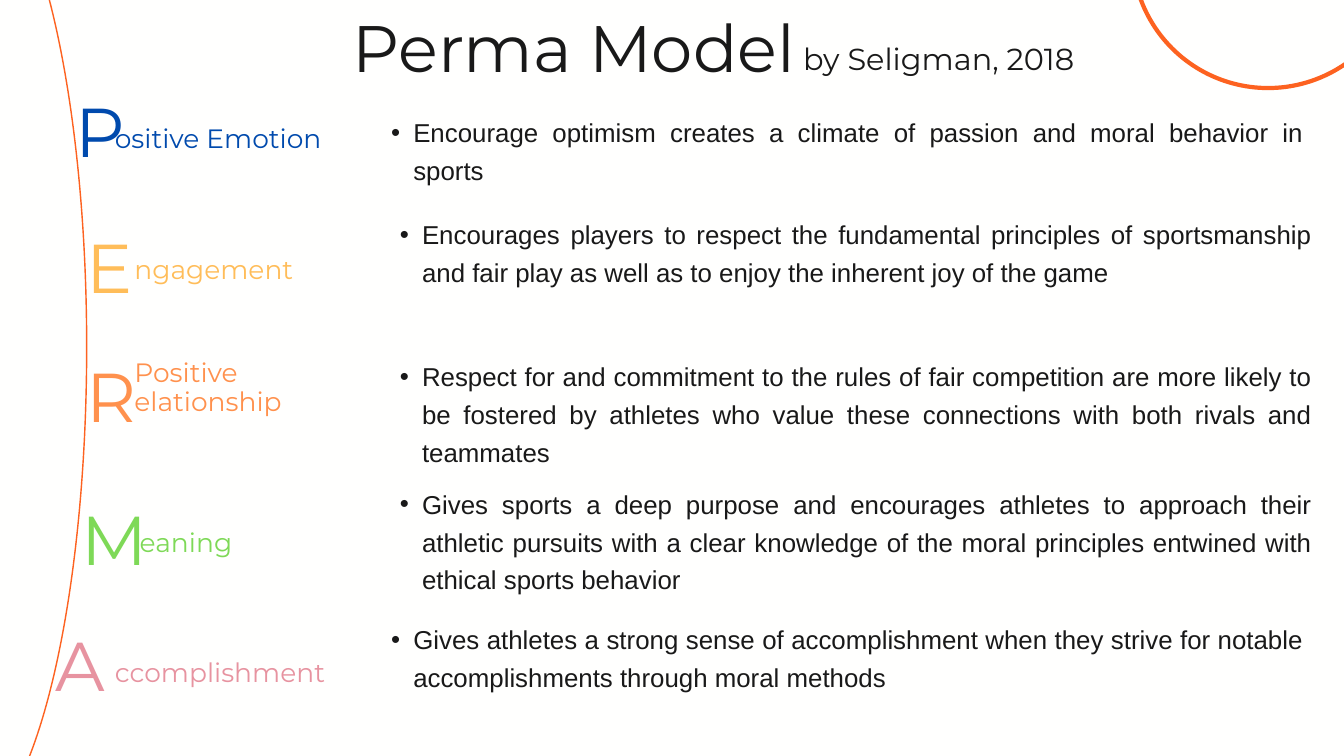
from copy import deepcopy

from pptx import Presentation
from pptx.dml.color import RGBColor
from pptx.enum.shapes import MSO_SHAPE
from pptx.enum.text import MSO_ANCHOR, MSO_AUTO_SIZE, PP_ALIGN
from pptx.oxml.ns import qn
from pptx.util import Inches, Pt

INK, ORANGE, PAPER = "191919", "FD6220", "FFFFFE"
HEAD_FONT, BODY_FONT = "Montserrat", "Arial"

# letter, rest of the word, colour, letter box, word box, bullet box, bullet
ROWS = [
    ("P", ["ositive Emotion"], "004AAD",
     (1.12, 1.11, 0.95, 1.35), (1.71, 1.86, 3.63, 0.45), (5.5, 1.64, 13.9, 1.16),
     "Encourage optimism creates a climate of passion and moral behavior in sports"),
    ("E", ["ngagement"], "FFBD59",
     (1.29, 3.14, 0.95, 1.39), (2, 3.81, 3.63, 0.45), (5.63, 3.16, 13.9, 2.24),
     "Encourages players to respect the fundamental principles of sportsmanship "
     "and fair play as well as to enjoy the inherent joy of the game"),
    ("R", ["Positive", "elationship"], "FF914D",
     (1.29, 5.05, 0.95, 1.35), (2, 5.34, 3.63, 0.88), (5.63, 5.27, 13.9, 2.24),
     "Respect for and commitment to the rules of fair competition are more likely "
     "to be fostered by athletes who value these connections with both rivals and teammates"),
    ("M", ["eaning"], "7ED957",
     (1.21, 7.18, 0.95, 1.35), (2.08, 7.87, 3.63, 0.45), (5.63, 7.17, 13.9, 1.69),
     "Gives sports a deep purpose and encourages athletes to approach their athletic "
     "pursuits with a clear knowledge of the moral principles entwined with ethical "
     "sports behavior"),
    ("A", ["ccomplishment"], "E793A0",
     (0.83, 9.05, 0.95, 1.35), (1.71, 9.8, 3.63, 0.45), (5.5, 9.18, 13.9, 2.24),
     "Gives athletes a strong sense of accomplishment when they strive for notable "
     "accomplishments through moral methods"),
]


def rgb(color):
    return RGBColor.from_string(color)


def set_attrs(obj, **values):
    for name, value in values.items():
        setattr(obj, name, value)


def place(sp, box):
    names = ("left", "top", "width", "height")
    set_attrs(sp, **{n: Inches(v) for n, v in zip(names, box)})


def write(sp, box, lines, size, spacing, color=INK, font=HEAD_FONT, align=PP_ALIGN.LEFT):
    """Place a text shape and fill it with one paragraph per line."""
    place(sp, box)
    tf = sp.text_frame
    set_attrs(tf, word_wrap=True, auto_size=MSO_AUTO_SIZE.SHAPE_TO_FIT_TEXT,
              vertical_anchor=MSO_ANCHOR.TOP, margin_left=0, margin_top=0,
              margin_right=0, margin_bottom=0)
    for i, line in enumerate(lines):
        p = tf.add_paragraph() if i else tf.paragraphs[0]
        set_attrs(p, alignment=align, line_spacing=Pt(spacing),
                  space_before=Pt(0), space_after=Pt(0))
        r = p.add_run()
        r.text = line
        set_attrs(r.font, name=font, size=Pt(size))
        r.font.color.rgb = rgb(color)


def add_text(s, box, lines, *style, **options):
    write(s.shapes.add_textbox(0, 0, 0, 0), box, lines, *style, **options)


def add_ring(s, box, weight):
    sp = s.shapes.add_shape(MSO_SHAPE.OVAL, 0, 0, 0, 0)
    place(sp, box)
    sp.shadow.inherit = False
    sp.fill.background()
    sp.line.color.rgb = rgb(ORANGE)
    sp.line.width = Pt(weight)


def add_heading(s):
    write(s.shapes.title, (5.24, -0.1, 7.26, 1.27), ["Perma Model"], 70.3, 98.5)
    add_text(s, (11.95, 0.51, 6.92, 0.61), ["by Seligman, 2018"], 32.5, 45.4)


def add_bullet(body, box, text):
    write(body, box, [text], 27.7, 40.4, font=BODY_FONT, align=PP_ALIGN.JUSTIFY)
    p = body.text_frame.paragraphs[0]
    p.level = 1
    pPr = p._p.get_or_add_pPr()
    pPr.set("marL", str(Inches(0.65)))
    pPr.set("indent", str(Inches(-0.33)))
    for tag, key, value in (("a:buFont", "typeface", BODY_FONT), ("a:buChar", "char", "•")):
        bullet = pPr.makeelement(qn(tag), {})
        bullet.set(key, value)
        pPr.append(bullet)


def add_row(s, body, row):
    letter, word, color, letter_box, word_box, bullet_box, bullet = row
    add_text(s, letter_box, [letter], 74, 103.6, color=color)
    add_text(s, word_box, word, 28.4, 31.2, color=color, align=PP_ALIGN.JUSTIFY)
    add_bullet(body, bullet_box, bullet)


def repeat_body(layout, count):
    """Give the layout one body placeholder per row."""
    body = next(ph for ph in layout.placeholders if ph.placeholder_format.idx == 1)
    for i in range(1, count):
        clone = deepcopy(body._element)
        clone.nvSpPr.cNvPr.set("id", str(20 + i))
        clone.nvSpPr.nvPr.find(qn("p:ph")).set("idx", str(20 + i))
        layout.shapes._spTree.append(clone)


def main():
    prs = Presentation()
    set_attrs(prs, slide_width=Inches(20), slide_height=Inches(11.25))
    layout = prs.slide_layouts[1]
    repeat_body(layout, len(ROWS))
    s = prs.slides.add_slide(layout)
    s.background.fill.solid()
    s.background.fill.fore_color.rgb = rgb(PAPER)

    # Decorative rings
    add_ring(s, (-2.54, -2.17, 3.83, 14.66), 1.5)
    add_ring(s, (16.85, -2.73, 4.04, 4.04), 4.5)

    # Heading and the five PERMA rows
    add_heading(s)
    bodies = [ph for ph in s.placeholders if ph.placeholder_format.idx > 0]
    for body, row in zip(bodies, ROWS):
        add_row(s, body, row)
    prs.save("out.pptx")


if __name__ == "__main__":
    main()
